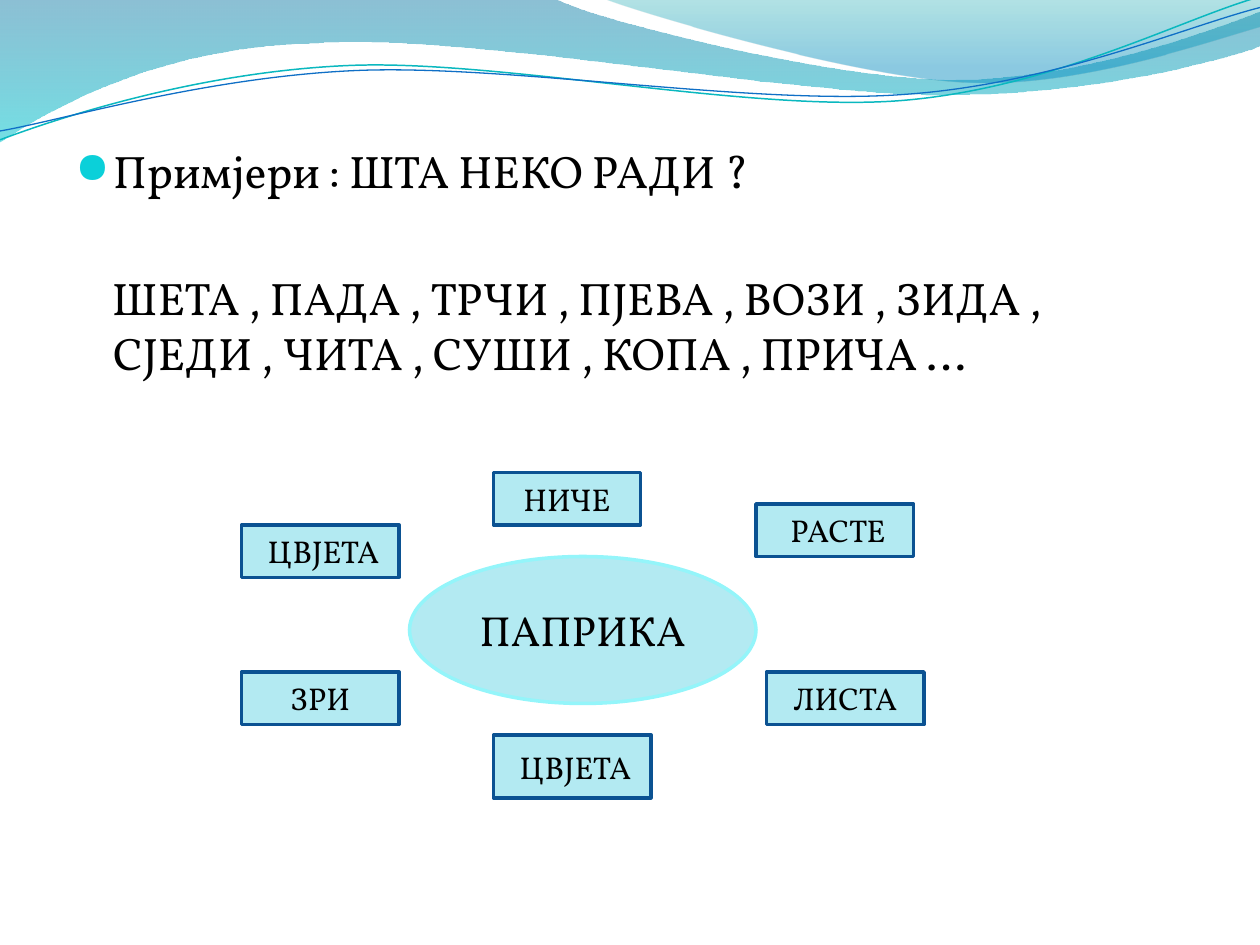
"""Build a slide of verb examples with a word web under a wavy header."""
from dataclasses import dataclass
from math import cos, radians, sin
from typing import Any

from pptx import Presentation
from pptx.dml.color import RGBColor as Rgb
from pptx.enum.shapes import MSO_SHAPE as Preset
from pptx.enum.text import MSO_ANCHOR as Anchor, PP_ALIGN as Align
from pptx.oxml import parse_xml
from pptx.oxml.ns import nsdecls, qn
from pptx.util import Inches, Pt

WIDTH, HEIGHT = Inches(10), Inches(7.5)
COLUMNS, ROWS = 120, 90
FONT = "Vollkorn"
TILT = 2.7
COLORS = {
    "text": "000000", "bullet": "0BD0D9", "panel": "B3EAF2",
    "panel_edge": "0B5292", "oval_edge": "94F5FA",
    "teal_line": "0AB8BF", "blue_line": "0F6FC6",
    "deep_blue": "0074A1", "aqua": "00C6CF",
    "sea": "00A1A9", "sky": "008BBF",
}
Point = tuple[float, float]


@dataclass(frozen=True)
class Stop:
    position: int
    color: str
    opacity: int


@dataclass(frozen=True)
class Wave:
    start: Point
    segments: tuple[tuple[float, ...], ...]
    stops: tuple[Stop, ...] = ()
    line: str = ""
    line_width: float = 0
    pivot: Point = (0, 0)


@dataclass(frozen=True)
class Word:
    text: str
    column: int
    row: int
    columns: int = 15
    rows: int = 5
    preset: Any = Preset.RECTANGLE
    edge: str = "panel_edge"
    size: int = 18
    inset: float = 0.1


WAVES = (
    Wave((0, 0), (
        (4.4, -0.01),
        (4.76, 0.17, 6.64, 0.63, 7.58, 0.63),
        (8.53, 0.63, 9.58, 0.26, 10, 0.09),
        (10.01, 0.36),
        (9.83, 0.44, 8.7, 0.76, 7.46, 0.75),
        (6.22, 0.75, 3.82, 0.28, 2.57, 0.34),
        (1.29, 0.36, 0.46, 0.83, -0.01, 1.13),
    ), stops=(Stop(0, "deep_blue", 45), Stop(100, "aqua", 55))),
    Wave((4.79, -0.01), (
        (5.09, 0.11, 6.82, 0.62, 7.69, 0.65),
        (8.56, 0.69, 9.61, 0.32, 10, 0.21),
        (10, 0),
    ), stops=(Stop(0, "sea", 30), Stop(80, "sky", 45))),
    Wave((0, 1.11), (
        (0.48, 0.93, 1.58, 0.57, 2.77, 0.52),
        (3.95, 0.47, 5.93, 0.89, 7.13, 0.8),
        (8.33, 0.71, 9.38, 0.15, 9.98, -0.02),
    ), line="teal_line", line_width=0.85, pivot=(4.99, 0.57)),
    Wave((0, 1.04), (
        (0.47, 0.96, 1.64, 0.61, 2.83, 0.56),
        (4.03, 0.51, 5.97, 0.84, 7.17, 0.75),
        (8.36, 0.67, 9.41, 0.21, 10, 0.06),
    ), line="blue_line", line_width=0.75, pivot=(5, 0.59)),
)

WORDS = (
    Word("ПАПРИКА", 39, 53, 33, 14, Preset.OVAL, "oval_edge", 24),
    Word("РАСТЕ", 72, 48, inset=0.15),
    Word("ЛИСТА", 73, 64),
    Word("НИЧЕ", 47, 45, columns=14),
    Word("ЦВЈЕТА", 47, 70, rows=6, inset=0.15),
    Word("ЦВЈЕТА", 23, 50, inset=0.15),
    Word("ЗРИ", 23, 64),
)


def rgb(name: str) -> Rgb:
    return Rgb.from_string(COLORS[name])


def grid(column: float, row: float, columns: float, rows: float) -> tuple[int, ...]:
    return (int(WIDTH * column / COLUMNS), int(HEIGHT * row / ROWS),
            int(WIDTH * columns / COLUMNS), int(HEIGHT * rows / ROWS))


def apply(target: Any, values: dict[str, Any]) -> None:
    for name, value in values.items():
        setattr(target, name, value)


def add_span(para: Any, text: str, size: int) -> None:
    span = para.add_run()
    span.text = text
    apply(span.font, {"name": FONT, "size": Pt(size)})
    span.font.color.rgb = rgb("text")


def place(wave: Wave, x: float, y: float) -> tuple[int, int]:
    angle = radians(0 if wave.stops else TILT)
    across, down = x - wave.pivot[0], y - wave.pivot[1]
    return (Inches(wave.pivot[0] + across * cos(angle) - down * sin(angle)),
            Inches(wave.pivot[1] + across * sin(angle) + down * cos(angle)))


def bend(shape: Any, wave: Wave) -> None:
    lines = list(shape._element.iter(qn("a:lnTo")))
    for line, segment in zip(lines, wave.segments):
        if len(segment) == 2:
            continue
        points = [place(wave, *segment[i:i + 2]) for i in (0, 2, 4)]
        marks = "".join(f'<a:pt x="{x - shape.left}" y="{y - shape.top}"/>'
                        for x, y in points)
        curve = parse_xml(f'<a:cubicBezTo {nsdecls("a")}>{marks}</a:cubicBezTo>')
        line.getparent().replace(line, curve)


def fill_gradient(shape: Any, stops: tuple[Stop, ...]) -> None:
    marks = "".join(
        f'<a:gs pos="{stop.position * 1000}"><a:srgbClr val="{COLORS[stop.color]}">'
        f'<a:alpha val="{stop.opacity * 1000}"/></a:srgbClr></a:gs>' for stop in stops)
    gradient = parse_xml(
        f'<a:gradFill {nsdecls("a")} rotWithShape="1"><a:gsLst>{marks}</a:gsLst>'
        '<a:lin ang="5400000" scaled="0"/></a:gradFill>')
    properties = shape._element.spPr
    properties.replace(properties.find(qn("a:noFill")), gradient)


def draw_wave(page: Any, wave: Wave) -> None:
    builder = page.shapes.build_freeform(*place(wave, *wave.start))
    builder.add_line_segments([place(wave, *segment[-2:]) for segment in wave.segments],
                              close=bool(wave.stops))
    shape = builder.convert_to_shape()
    bend(shape, wave)
    shape.shadow.inherit = False
    shape.fill.background()
    if wave.stops:
        fill_gradient(shape, wave.stops)
        shape.line.fill.background()
    else:
        shape.rotation = 360 - TILT
        shape.line.color.rgb = rgb(wave.line)
        shape.line.width = Pt(wave.line_width)


def draw_examples(page: Any) -> None:
    box = page.shapes.add_textbox(*grid(6, 13, 108, 70))
    box.text_frame.word_wrap = True
    heading = box.text_frame.paragraphs[0]
    verbs = box.text_frame.add_paragraph()
    for para, indent in ((heading, -0.3), (verbs, -0.01)):
        layout = para._p.get_or_add_pPr()
        layout.set("marL", str(Inches(0.3)))
        layout.set("indent", str(Inches(indent)))
    for tag in (
        f'<a:buClr {nsdecls("a")}><a:srgbClr val="{COLORS["bullet"]}"/></a:buClr>',
        f'<a:buSzPct {nsdecls("a")} val="95000"/>',
        f'<a:buFont {nsdecls("a")} typeface="OpenSymbol"/>',
        f'<a:buChar {nsdecls("a")} char="●"/>',
    ):
        heading._p.pPr.append(parse_xml(tag))
    verbs.space_before = Pt(41.6)
    add_span(heading, "Примјери : ШТА НЕКО РАДИ ?", 26)
    add_span(verbs, "ШЕТА , ПАДА , ТРЧИ , ПЈЕВА , ВОЗИ , ЗИДА , "
                    "СЈЕДИ , ЧИТА , СУШИ , КОПА , ПРИЧА ...", 26)


def draw_word(page: Any, word: Word) -> None:
    shape = page.shapes.add_shape(
        word.preset, *grid(word.column, word.row, word.columns, word.rows))
    shape.shadow.inherit = False
    shape.fill.solid()
    shape.fill.fore_color.rgb = rgb("panel")
    shape.line.color.rgb = rgb(word.edge)
    shape.line.width = Pt(2)
    apply(shape.text_frame, {"word_wrap": True, "vertical_anchor": Anchor.MIDDLE,
                             "margin_left": Inches(word.inset)})
    para = shape.text_frame.paragraphs[0]
    para.alignment = Align.CENTER
    add_span(para, word.text, word.size)


def main() -> None:
    deck = Presentation()
    apply(deck, {"slide_width": WIDTH, "slide_height": HEIGHT})
    page = deck.slides.add_slide(deck.slide_layouts[6])
    for wave in WAVES:
        draw_wave(page, wave)
    draw_examples(page)
    for word in WORDS:
        draw_word(page, word)
    deck.save("out.pptx")


if __name__ == "__main__":
    main()
